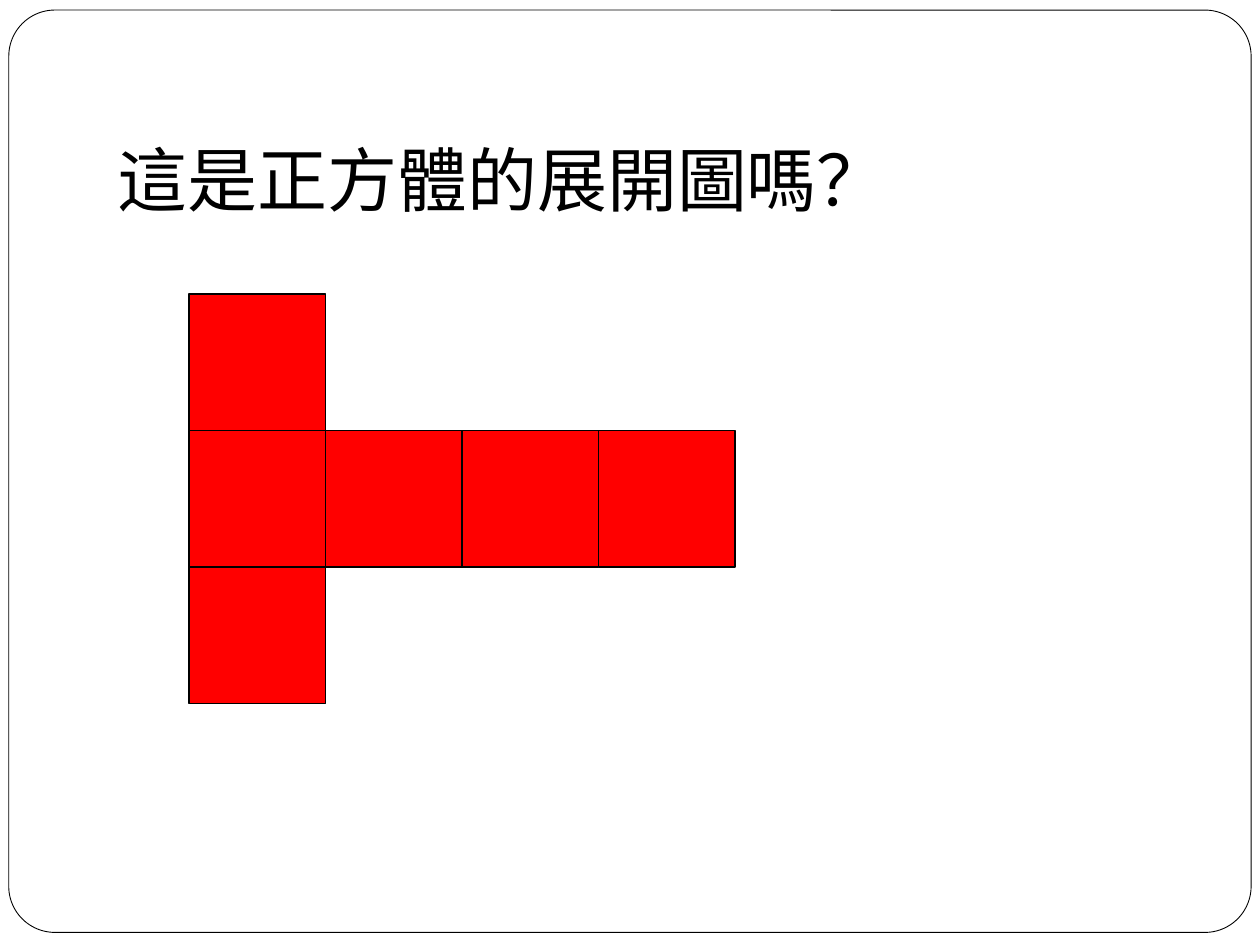
import pptx
import pptx.util
import pptx.dml.color
import pptx.enum.shapes
import pptx.enum.text
import pptx.oxml.ns
from lxml import etree

COLORS = {"paper": "FFFFFF", "ink": "000000", "face": "FF0000"}
FONT = "Noto Sans CJK JP"
UNIT = pptx.util.Inches(1) // 12  # grid step: 120 columns by 90 rows
FACE = 13  # side of one cube face, in grid steps
NET_LEFT, NET_TOP = 18, 28
NET = ["X...",
       "XXXX",
       "X..."]


def grid(*steps):
    return [round(n * UNIT) for n in steps]


def rgb(name):
    return pptx.dml.color.RGBColor.from_string(COLORS[name])


def add_box(shapes, kind, box, fill, line_width):
    s = shapes.add_shape(kind, *box)
    s.shadow.inherit = False
    s.fill.solid()
    s.fill.fore_color.rgb = rgb(fill)
    s.line.color.rgb = rgb("ink")
    s.line.width = pptx.util.Pt(line_width)
    return s


def add_frame(slide):
    box = [pptx.util.Inches(n) for n in (0.07, 0.08, 9.86, 7.32)]
    kind = pptx.enum.shapes.MSO_SHAPE.ROUNDED_RECTANGLE
    s = add_box(slide.shapes, kind, box, "paper", 0.5)
    s.adjustments[0] = 0.05
    # Keep the frame behind the title
    slide.shapes._spTree.insert(2, s._element)


def set_title(slide, text):
    title = slide.shapes.title
    title.left, title.top, title.width, title.height = grid(10, 13, 78, 21.4)
    tf = title.text_frame
    frame_format = {"word_wrap": True, "margin_top": 0,
                    "auto_size": pptx.enum.text.MSO_AUTO_SIZE.NONE,
                    "vertical_anchor": pptx.enum.text.MSO_ANCHOR.TOP}
    for name, value in frame_format.items():
        setattr(tf, name, value)
    p = tf.paragraphs[0]
    p.alignment = pptx.enum.text.PP_ALIGN.LEFT
    r = p.add_run()
    r.text = text
    for name, value in {"name": FONT, "size": pptx.util.Pt(40)}.items():
        setattr(r.font, name, value)
    r.font.color.rgb = rgb("ink")
    # East Asian typeface
    ea = etree.SubElement(r._r.get_or_add_rPr(), pptx.oxml.ns.qn("a:ea"))
    ea.set("typeface", FONT)


def add_net(slide):
    group = slide.shapes.add_group_shape()
    kind = pptx.enum.shapes.MSO_SHAPE.RECTANGLE
    for row, cells in enumerate(NET):
        for col, cell in enumerate(cells):
            if cell == "X":
                box = grid(NET_LEFT + col * FACE, NET_TOP + row * FACE,
                           FACE, FACE)
                add_box(group.shapes, kind, box, "face", 0.75)


def main():
    prs = pptx.Presentation()
    prs.slide_width, prs.slide_height = grid(120, 90)
    slide = prs.slides.add_slide(prs.slide_layouts[5])
    add_frame(slide)
    set_title(slide, "這是正方體的展開圖嗎？")
    add_net(slide)
    prs.save("out.pptx")


if __name__ == "__main__":
    main()
